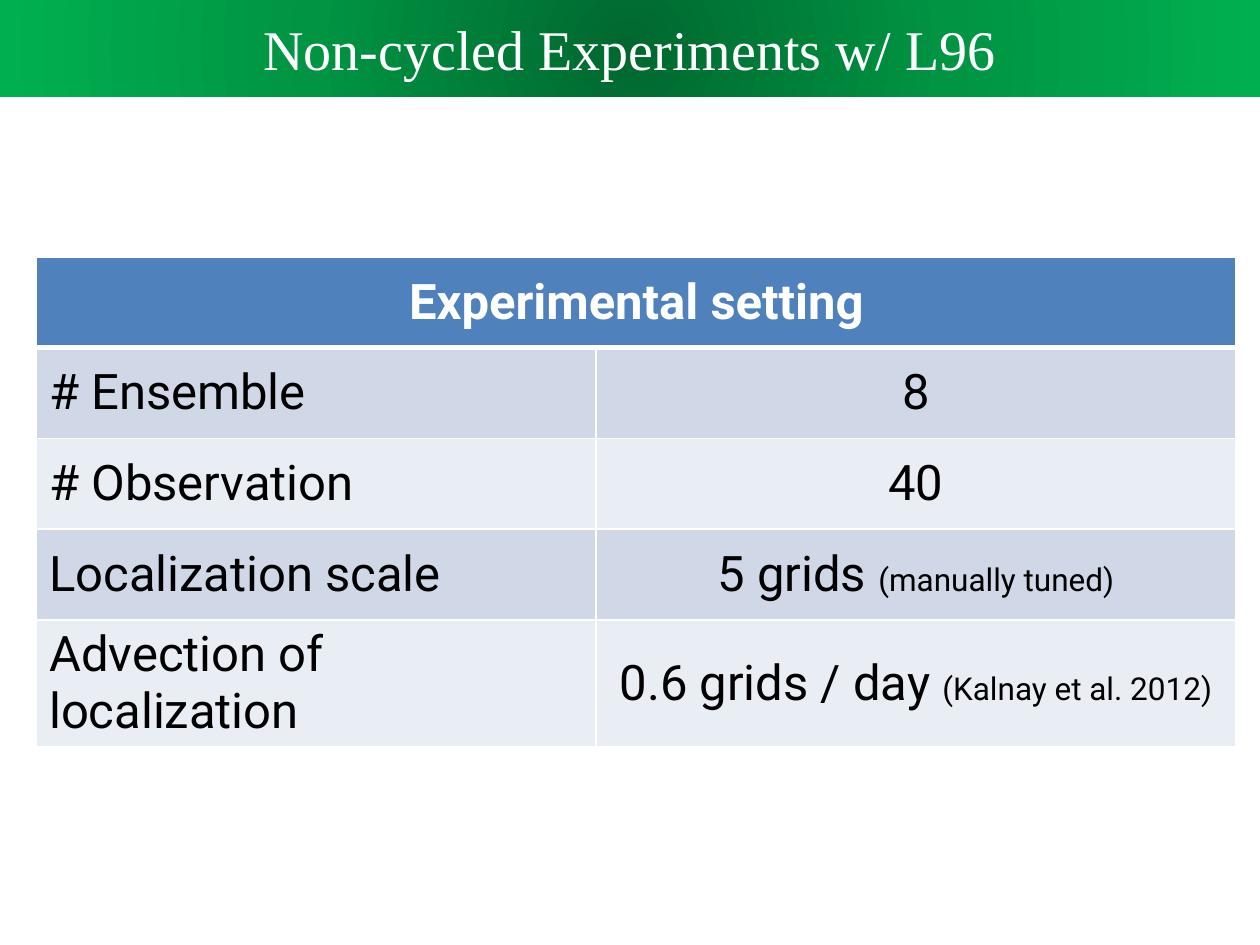
import lxml.etree
import pptx
import pptx.dml.color
import pptx.enum.text
import pptx.oxml
import pptx.oxml.ns
import pptx.util

Inches = pptx.util.Inches
ALIGN = pptx.enum.text.PP_ALIGN
MIDDLE = pptx.enum.text.MSO_ANCHOR.MIDDLE

WHITE = "FFFFFF"
BLACK = "000000"
HEADER_BLUE = "4F81BD"
BAND_COLOURS = ["D0D8E8", "E9EDF4"]
TITLE_STOPS = [(0, "00682F"), (50, "009443"), (100, "00B050")]
TABLE_FONT = "Roboto"

# Each row: label, value, small remark after the value
SETTINGS = [
    ("# Ensemble", "8", ""),
    ("# Observation", "40", ""),
    ("Localization scale", "5 grids ", "(manually tuned)"),
    ("Advection of localization", "0.6 grids / day ", "(Kalnay et al. 2012)"),
]


def rgb(value):
    return pptx.dml.color.RGBColor.from_string(value)


def format_span(span, font, size, colour, bold=False):
    span.font.name = font
    span.font.size = pptx.util.Pt(size)
    span.font.color.rgb = rgb(colour)
    span.font.bold = bold


def fill_radial(shape, stops):
    """Fill a shape with a gradient spreading from its centre."""
    stop_xml = "".join(
        f'<a:gs pos="{position * 1000}"><a:srgbClr val="{colour}"/></a:gs>'
        for position, colour in stops
    )
    shape._element.spPr.append(pptx.oxml.parse_xml(
        f'<a:gradFill {pptx.oxml.ns.nsdecls("a")} rotWithShape="1">'
        f'<a:gsLst>{stop_xml}</a:gsLst><a:path path="circle">'
        '<a:fillToRect l="50000" t="50000" r="50000" b="50000"/>'
        '</a:path></a:gradFill>'
    ))


def add_title(slide, text):
    title = slide.shapes.title
    title.left, title.top = Inches(0), Inches(0)
    title.width, title.height = Inches(10), Inches(0.77)
    fill_radial(title, TITLE_STOPS)
    frame = title.text_frame
    frame.text = text
    frame.auto_size = pptx.enum.text.MSO_AUTO_SIZE.NONE
    frame.vertical_anchor = MIDDLE
    para = frame.paragraphs[0]
    para.alignment = ALIGN.CENTER
    format_span(para.runs[0], "Times New Roman", 32, WHITE)


def set_borders(cell, top=1, bottom=1):
    """Draw white cell borders; widths are in points."""
    properties = cell._tc.get_or_add_tcPr()
    for side, width in (("L", 1), ("R", 1), ("T", top), ("B", bottom)):
        line = lxml.etree.SubElement(
            properties, pptx.oxml.ns.qn(f"a:ln{side}"), w=str(pptx.util.Pt(width)))
        fill = lxml.etree.SubElement(line, pptx.oxml.ns.qn("a:solidFill"))
        lxml.etree.SubElement(fill, pptx.oxml.ns.qn("a:srgbClr"), val=WHITE)


def paint_cell(cell, colour, top=1, bottom=1):
    set_borders(cell, top, bottom)
    cell.fill.solid()
    cell.fill.fore_color.rgb = rgb(colour)
    cell.vertical_anchor = MIDDLE


def write_cell(cell, text, alignment, colour=BLACK, bold=False, remark=""):
    para = cell.text_frame.paragraphs[0]
    para.text = text
    para.alignment = alignment
    format_span(para.runs[0], TABLE_FONT, 28, colour, bold)
    if remark:
        span = para.add_run()
        span.text = remark
        format_span(span, TABLE_FONT, 18, colour)


def add_settings_table(slide, heading, settings):
    table = slide.shapes.add_table(
        len(settings) + 1, 2,
        Inches(0.29), Inches(2.04), Inches(9.52), Inches(3.6)).table
    for column, width in zip(table.columns, (4.44, 5.08)):
        column.width = Inches(width)

    for column in range(2):
        paint_cell(table.cell(0, column), HEADER_BLUE, bottom=3)
    table.cell(0, 0).merge(table.cell(0, 1))
    write_cell(table.cell(0, 0), heading, ALIGN.CENTER, WHITE, bold=True)

    for row, (label, value, remark) in enumerate(settings, start=1):
        for column in range(2):
            paint_cell(table.cell(row, column), BAND_COLOURS[(row - 1) % 2],
                       top=3 if row == 1 else 1)
        write_cell(table.cell(row, 0), label, ALIGN.LEFT)
        write_cell(table.cell(row, 1), value, ALIGN.CENTER, remark=remark)


def main():
    deck = pptx.Presentation()
    deck.slide_width, deck.slide_height = Inches(10), Inches(7.5)
    slide = deck.slides.add_slide(deck.slide_layouts[5])
    add_title(slide, "Non-cycled Experiments w/ L96")
    add_settings_table(slide, "Experimental setting", SETTINGS)
    deck.save("out.pptx")


if __name__ == "__main__":
    main()
